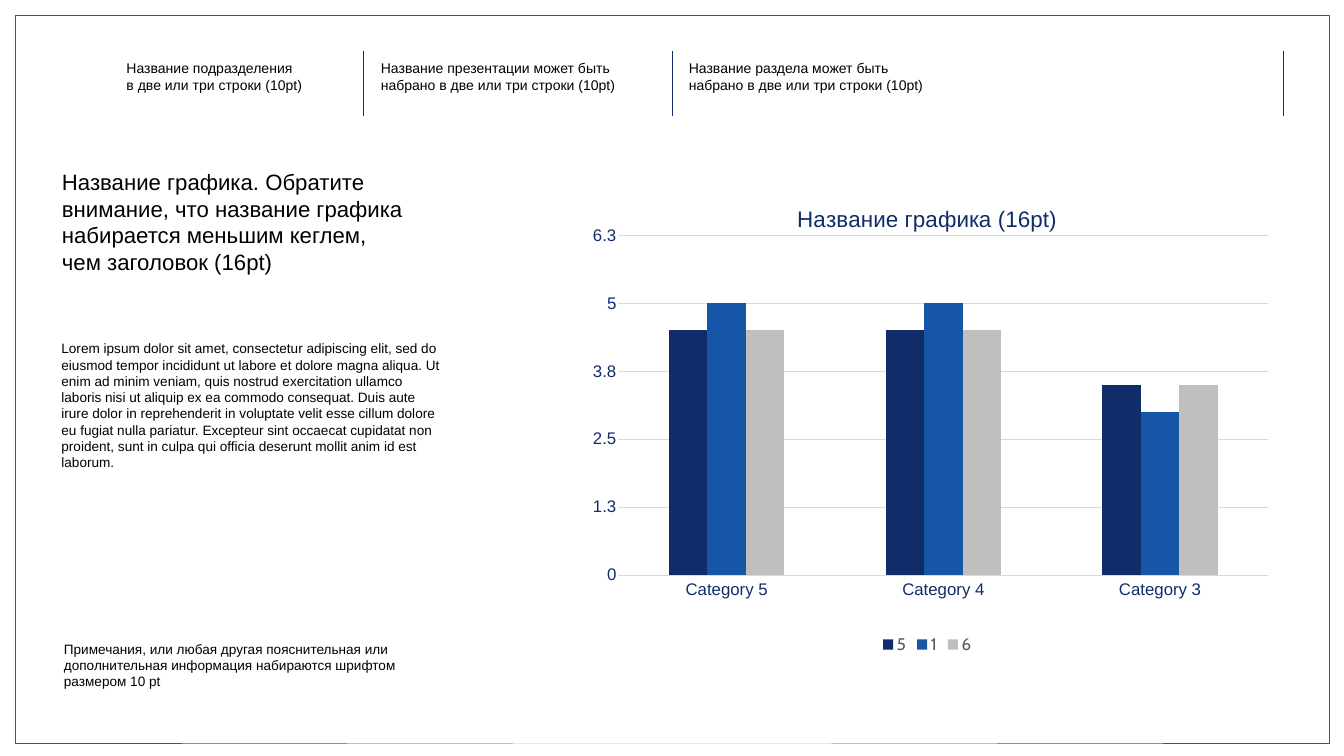
from typing import NamedTuple

from lxml.etree import SubElement
from pptx import Presentation
from pptx.chart.data import CategoryChartData
from pptx.dml.color import RGBColor
from pptx.enum.chart import XL_CHART_TYPE, XL_LEGEND_POSITION, XL_TICK_LABEL_POSITION, XL_TICK_MARK
from pptx.enum.shapes import MSO_CONNECTOR, MSO_SHAPE
from pptx.oxml import parse_xml
from pptx.oxml.ns import nsdecls, qn
from pptx.util import Inches, Pt

WIDTH, HEIGHT = Inches(26.67), Inches(15)
GRID = 100  # columns and rows across the slide

COLORS = {
    "paper": "FFFFFF",
    "frame": "32538F",
    "navy": "102D69",
    "blue": "1656A6",
    "silver": "BFBFBF",
    "grid": "D9D9D9",
    "legend": "595959",
    "ink": "000000",
}


class Area(NamedTuple):
    """A place on the slide, in grid columns and rows."""
    column: float
    row: float
    columns: float
    rows: float


class Caption(NamedTuple):
    area: Area
    text: str
    size: float


class Series(NamedTuple):
    name: str
    values: tuple
    color: str


FRAME = Area(1.09, 2, 97.83, 96.27)
RULE_COLUMNS = (27.03, 50.02, 95.5)
RULE_TOP, RULE_BOTTOM = 6.8, 15.33
CHART_AREA = Area(43.34, 24.93, 51.29, 62.13)

CAPTIONS = (
    Caption(Area(9.04, 7.27, 16.84, 5.8),
            "Название подразделения\vв две или три строки (10pt)", 20),
    Caption(Area(27.97, 7.27, 18.49, 8),
            "Название презентации может быть набрано в две или три строки (10pt)", 20),
    Caption(Area(50.88, 7.27, 18.49, 8),
            "Название раздела может быть набрано в две или три строки (10pt)", 20),
    Caption(Area(4.24, 21.6, 29.21, 15.4),
            "Название графика. Обратите\vвнимание, что название графика "
            "набирается меньшим кеглем, \vчем заголовок (16pt)", 31.7),
    Caption(Area(4.2, 44.33, 29.21, 19.13),
            "Lorem ipsum dolor sit amet, consectetur adipiscing elit, sed do eiusmod tempor "
            "incididunt ut labore et dolore magna aliqua. Ut enim ad minim veniam, quis nostrud "
            "exercitation ullamco laboris nisi ut aliquip ex ea commodo consequat. Duis aute irure "
            "dolor in reprehenderit in voluptate velit esse cillum dolore eu fugiat nulla pariatur. "
            "Excepteur sint occaecat cupidatat non proident, sunt in culpa qui officia deserunt "
            "mollit anim id est laborum.", 19.4),
    Caption(Area(4.39, 84.07, 26.81, 8),
            "Примечания, или любая другая пояснительная или дополнительная информация "
            "набираются шрифтом размером 10 pt", 19.4),
)

CATEGORIES = ("Category 5", "Category 4", "Category 3")
SERIES = (
    Series("5", (4.5, 4.5, 3.5), "navy"),
    Series("1", (5, 5, 3), "blue"),
    Series("6", (4.5, 4.5, 3.5), "silver"),
)
PLOT_SHARES = {"x": 0.052, "y": 0.1, "w": 0.943, "h": 0.723}


def rgb(name: str) -> RGBColor:
    return RGBColor.from_string(COLORS[name])


def across(columns: float) -> int:
    return round(WIDTH * columns / GRID)


def down(rows: float) -> int:
    return round(HEIGHT * rows / GRID)


def place(area: Area) -> tuple:
    return across(area.column), down(area.row), across(area.columns), down(area.rows)


def style_font(font, size: float, color: str, name: str = "Arial") -> None:
    font.size, font.name, font.bold = Pt(size), name, False
    font.color.rgb = rgb(color)


def add_frame(slide) -> None:
    frame = slide.shapes.add_shape(MSO_SHAPE.RECTANGLE, *place(FRAME))
    frame.shadow.inherit = False
    frame.fill.solid()
    frame.fill.fore_color.rgb = rgb("paper")
    frame.line.color.rgb = rgb("frame")
    frame.line.width = Pt(0.25)


def add_rule(slide, column: float) -> None:
    x = across(column)
    rule = slide.shapes.add_connector(
        MSO_CONNECTOR.STRAIGHT, x, down(RULE_TOP), x, down(RULE_BOTTOM))
    rule.line.color.rgb = rgb("navy")
    rule.line.width = Pt(0.75)
    SubElement(rule._element.spPr, qn("a:effectLst"))


def add_caption(slide, caption: Caption) -> None:
    frame = slide.shapes.add_textbox(*place(caption.area)).text_frame
    frame.word_wrap = True
    frame.margin_left = frame.margin_right = Inches(0.1)
    frame.margin_top = frame.margin_bottom = Inches(0.1)
    frame.text = caption.text
    style_font(frame.paragraphs[0].font, caption.size, "ink")


def fix_plot_area(chart) -> None:
    """Give the inner plot area its fixed share of the chart."""
    plot_area = chart._chartSpace.chart.plotArea
    for layout in plot_area.findall(qn("c:layout")):
        plot_area.remove(layout)
    shares = "".join(f'<c:{key} val="{share}"/>' for key, share in PLOT_SHARES.items())
    plot_area.insert(0, parse_xml(
        f'<c:layout {nsdecls("c")}><c:manualLayout><c:layoutTarget val="inner"/>'
        f'<c:xMode val="edge"/><c:yMode val="edge"/>{shares}</c:manualLayout></c:layout>'))


def style_axes(chart) -> None:
    for axis in (chart.category_axis, chart.value_axis):
        axis.major_tick_mark = axis.minor_tick_mark = XL_TICK_MARK.NONE
        axis.format.line.fill.background()
        style_font(axis.tick_labels.font, 24, "navy")
    chart.category_axis.tick_label_position = XL_TICK_LABEL_POSITION.LOW
    values = chart.value_axis
    values.minimum_scale, values.maximum_scale, values.major_unit = 0, 6.25, 1.25
    values.tick_labels.number_format = "0.#"
    values.tick_labels.number_format_is_linked = False
    values.major_gridlines.format.line.color.rgb = rgb("grid")
    values.major_gridlines.format.line.width = Pt(1)


def add_column_chart(slide) -> None:
    data = CategoryChartData()
    data.categories = CATEGORIES
    for series in SERIES:
        data.add_series(series.name, series.values)
    chart = slide.shapes.add_chart(
        XL_CHART_TYPE.COLUMN_CLUSTERED, *place(CHART_AREA), data).chart
    style_font(chart.font, 10, "ink")

    title = chart.chart_title.text_frame
    title.text = "Название графика (16pt)"
    style_font(title.paragraphs[0].font, 32, "navy")
    chart.chart_title.include_in_layout = True

    chart.has_legend = True
    chart.legend.position = XL_LEGEND_POSITION.BOTTOM
    chart.legend.include_in_layout = True
    style_font(chart.legend.font, 24, "legend", "Cabin")

    columns = chart.plots[0]
    columns.gap_width, columns.overlap, columns.vary_by_categories = 262, 0, False
    for drawn, series in zip(columns.series, SERIES):
        drawn.format.fill.solid()
        drawn.format.fill.fore_color.rgb = rgb(series.color)
    style_axes(chart)
    fix_plot_area(chart)


def main() -> None:
    presentation = Presentation()
    presentation.slide_width, presentation.slide_height = WIDTH, HEIGHT
    slide = presentation.slides.add_slide(presentation.slide_layouts[6])
    add_frame(slide)
    for column in RULE_COLUMNS:
        add_rule(slide, column)
    for caption in CAPTIONS:
        add_caption(slide, caption)
    add_column_chart(slide)
    presentation.save("out.pptx")


if __name__ == "__main__":
    main()
